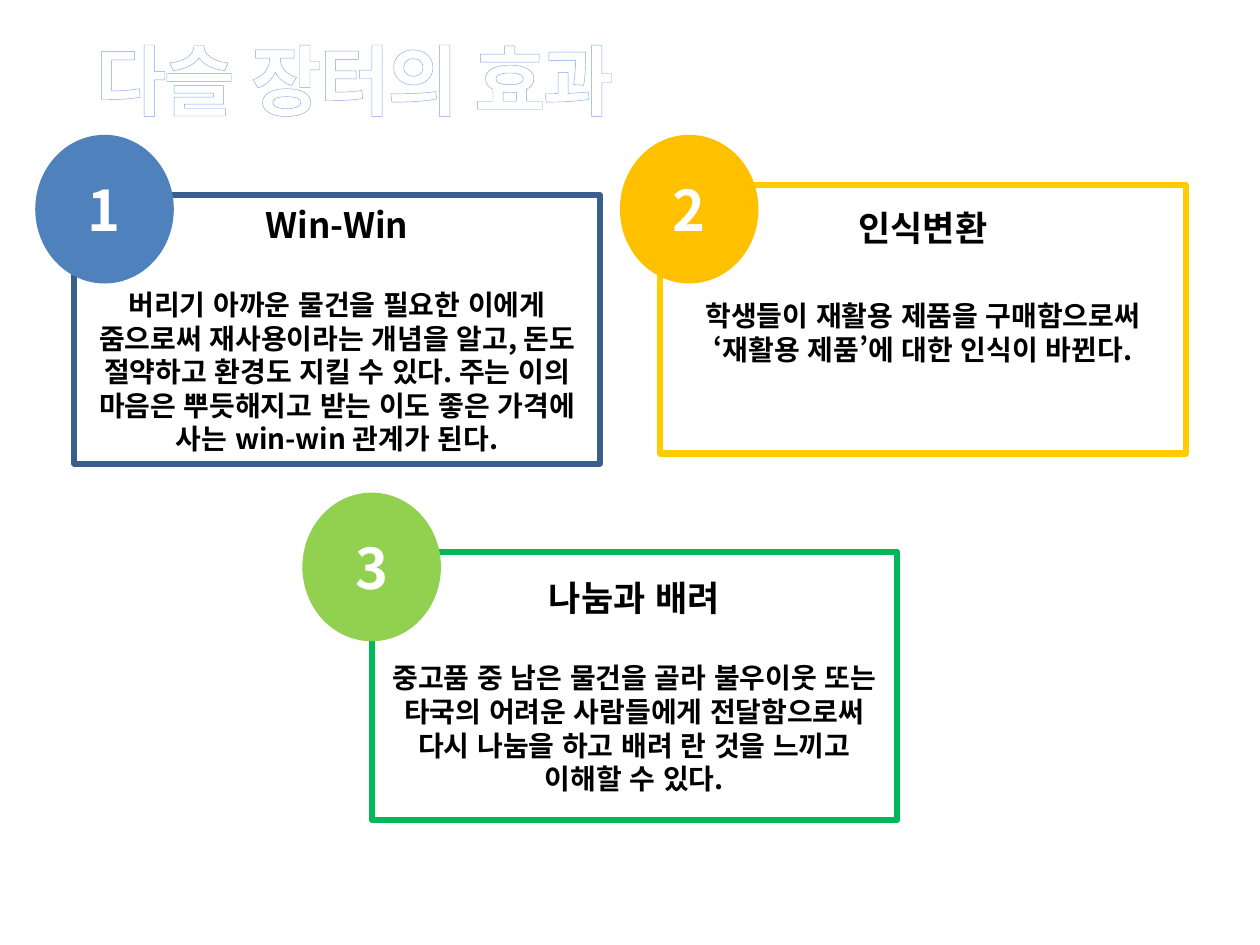
from lxml import etree
from pptx import Presentation
from pptx.dml.color import RGBColor
from pptx.enum.lang import MSO_LANGUAGE_ID
from pptx.enum.shapes import MSO_SHAPE
from pptx.enum.text import MSO_ANCHOR, PP_ALIGN
from pptx.oxml.ns import qn
from pptx.util import Inches, Pt

RECTANGLE = MSO_SHAPE.RECTANGLE
OVAL = MSO_SHAPE.OVAL
MIDDLE = MSO_ANCHOR.MIDDLE
CENTER = PP_ALIGN.CENTER
KOREAN = MSO_LANGUAGE_ID.KOREAN
FONT = "Noto Sans CJK KR"
LINE_HEIGHT = 1.2
CARD_SIZE = (4.17, 2.13)
BADGE_SIZE = (1.1, 1.18)

# number, heading, body, card place, badge place, line, badge fill, gap, bottom inset
CARDS = [
    ("1", "Win-Win",
     "버리기 아까운 물건을 필요한 이에게 줌으로써 재사용이라는 개념을 알고, 돈도 "
     "절약하고 환경도 지킬 수 있다. 주는 이의 마음은 뿌듯해지고 받는 이도 좋은 가격에 "
     "사는 win-win 관계가 된다.",
     (0.59, 1.55), (0.28, 1.07), "3A5F8C", "4F81BD", 24, 0.05),
    ("2", "인식변환",
     "학생들이 재활용 제품을 구매함으로써 ‘재활용 제품’에 대한 인식이 바뀐다.",
     (5.24, 1.47), (4.92, 1.07), "FFCC00", "FFC000", 28.8, 0.58),
    ("3", "나눔과 배려",
     "중고품 중 남은 물건을 골라 불우이웃 또는 타국의 어려운 사람들에게 전달함으로써 "
     "다시 나눔을 하고 배려 란 것을 느끼고 이해할 수 있다.",
     (2.95, 4.38), (2.4, 3.91), "00B858", "92D050", 24, 0.05),
]


def color(value):
    """Return the colour for a hex string."""
    return RGBColor.from_string(value)


def format_paragraph(paragraph, size, hex_color):
    """Centre a paragraph and set the look of its runs."""
    paragraph.alignment = CENTER
    paragraph.line_spacing = Pt(size * LINE_HEIGHT)
    for run in paragraph.runs:
        font = run.font
        font.name = FONT
        font.size = Pt(size)
        font.bold = True
        font.color.rgb = color(hex_color)
        font.language_id = KOREAN
        latin = run._r.rPr.find(qn("a:latin"))
        east_asian = etree.Element(qn("a:ea"), typeface=FONT)
        latin.addnext(east_asian)


def outline_run(run, hex_color, width, spacing):
    """Give a run an outline and letter spacing in points."""
    properties = run._r.rPr
    properties.set("spc", str(int(spacing * 100)))
    line = etree.Element(qn("a:ln"), w=str(Pt(width)))
    fill = etree.SubElement(line, qn("a:solidFill"))
    etree.SubElement(fill, qn("a:srgbClr"), val=hex_color)
    properties.insert(0, line)


def add_title(slide, text):
    """Add the outlined slide title."""
    box = slide.shapes.add_textbox(Inches(0.43), Inches(0.21), Inches(4.77), Inches(0.84))
    frame = box.text_frame
    frame.word_wrap = False
    frame.text = text
    paragraph = frame.paragraphs[0]
    format_paragraph(paragraph, 44, "FFFFFF")
    outline_run(paragraph.runs[0], "7EA6EA", 2.48, -1.5)


def add_filled_shape(group, kind, place, size, fill):
    """Add a filled shape without line or shadow to a group."""
    shape = group.shapes.add_shape(kind, *map(Inches, place + size))
    shape.shadow.inherit = False
    shape.fill.solid()
    shape.fill.fore_color.rgb = color(fill)
    shape.line.fill.background()
    shape.text_frame.word_wrap = True
    shape.text_frame.vertical_anchor = MIDDLE
    return shape


def add_card(slide, number, heading, body, place, badge_place, line, badge_fill, gap, bottom):
    """Add a framed card with a numbered badge."""
    group = slide.shapes.add_group_shape()
    card = add_filled_shape(group, RECTANGLE, place, CARD_SIZE, "FFFFFF")
    card.line.color.rgb = color(line)
    card.line.width = Pt(3.5)
    frame = card.text_frame
    frame.margin_bottom = Inches(bottom)
    frame.text = f"{heading}\n{body}"
    for paragraph, size in zip(frame.paragraphs, (20, 16)):
        format_paragraph(paragraph, size, "000000")
    frame.paragraphs[1].space_before = Pt(gap)

    badge = add_filled_shape(group, OVAL, badge_place, BADGE_SIZE, badge_fill)
    badge.text_frame.text = number
    format_paragraph(badge.text_frame.paragraphs[0], 32, "FFFFFF")


def main():
    """Build and save the slide."""
    presentation = Presentation()
    presentation.slide_width = Inches(10)
    presentation.slide_height = Inches(7.5)
    slide = presentation.slides.add_slide(presentation.slide_layouts[6])
    add_title(slide, "다슬 장터의 효과")
    for card in CARDS:
        add_card(slide, *card)
    presentation.save("out.pptx")


if __name__ == "__main__":
    main()
